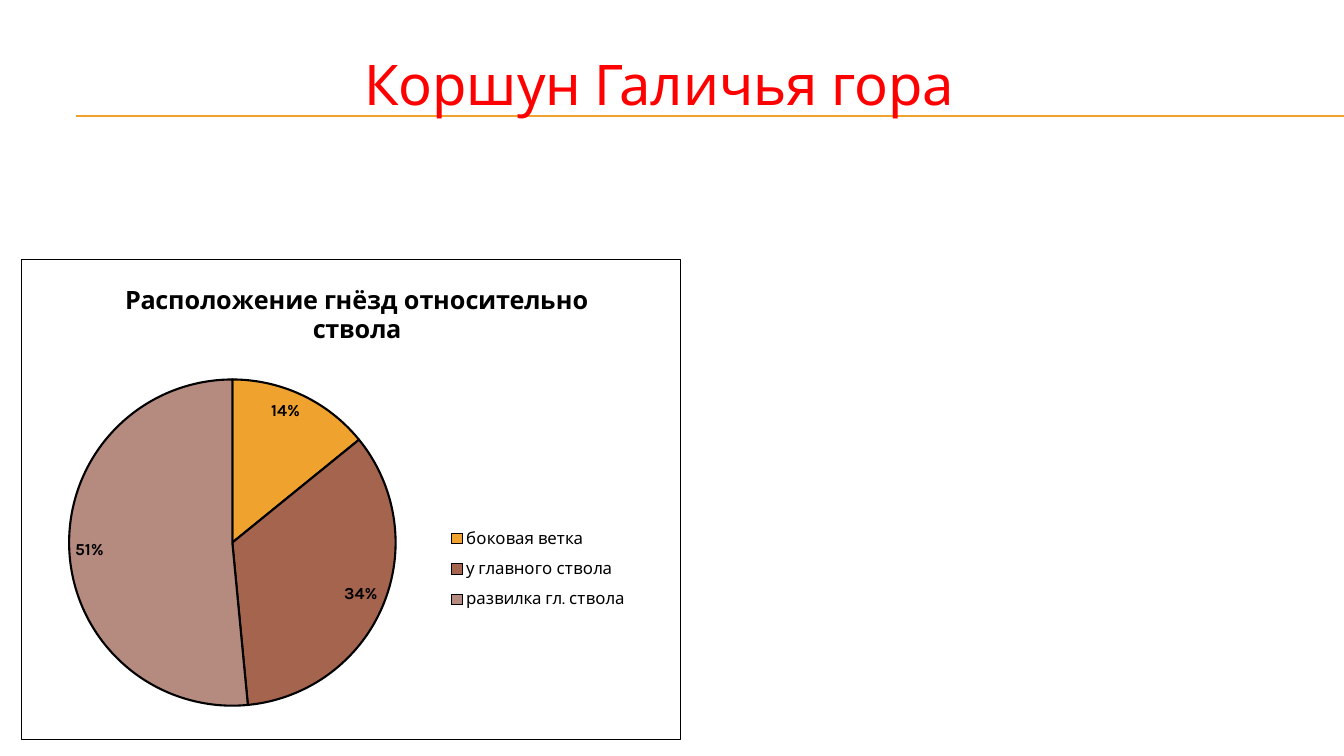
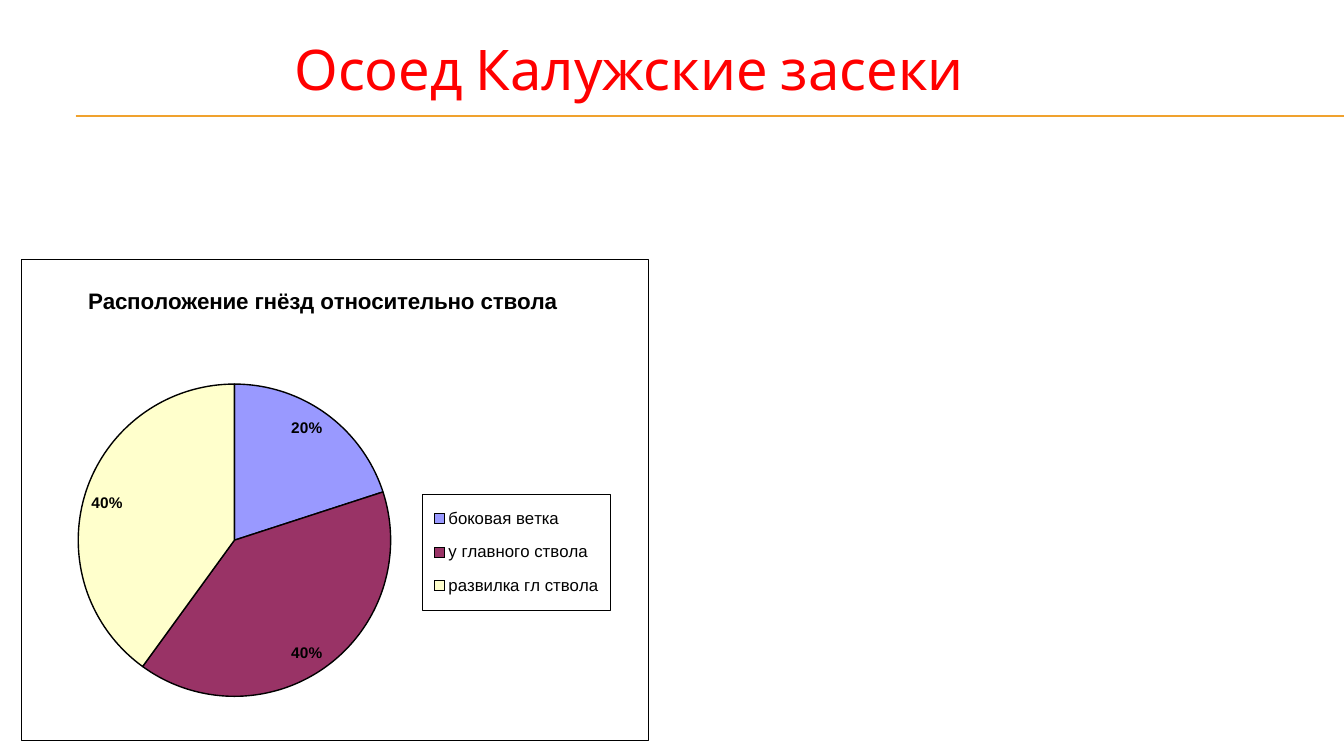
from dataclasses import dataclass

import lxml.etree
import pptx
import pptx.chart.data
import pptx.dml.color
import pptx.enum.chart
import pptx.enum.shapes
import pptx.enum.text
import pptx.oxml
import pptx.oxml.ns
import pptx.util

Inches = pptx.util.Inches
Pt = pptx.util.Pt
qn = pptx.oxml.ns.qn

BLACK = "000000"
WHITE = "FFFFFF"
RED = "FF0000"
AMBER = "F0A22E"
HEADING_FONT = "Karla"
TITLE_ONLY = 5


@dataclass
class Sector:
    place: str
    share: int
    color: str


@dataclass
class NestSlide:
    heading: str
    heading_left: float
    heading_top: float
    chart_width: float
    font: str
    caption_size: int
    label_size: int
    sector_line: float
    border: float
    legend_border: float
    caption_spot: tuple[float, ...]
    pie_spot: tuple[float, ...]
    legend_spot: tuple[float, ...]
    sectors: list[Sector]


CAPTION = "Расположение гнёзд относительно ствола"
NEST_SLIDES = [
    NestSlide(
        "Коршун Галичья гора", 1.85, 0.44, 6.54, "Karla", 18, 12, 1.5, 0.75, 0,
        (0.15, 0.04), (0.07, 0.25, 0.5, 0.68), (0.64, 0.54, 0.29, 0.21),
        [
            Sector("боковая ветка", 14, AMBER),
            Sector("у главного ствола", 34, "A5644E"),
            Sector("развилка гл. ствола", 51, "B58B80"),
        ],
    ),
    NestSlide(
        "Осоед Калужские засеки", 1.55, 0.29, 6.22, "Arial", 16, 11, 1, 0.25, 0.25,
        (0.1, 0.05), (0.09, 0.26, 0.5, 0.65), (0.64, 0.49, 0.3, 0.24),
        [
            Sector("боковая ветка", 20, "9999FF"),
            Sector("у главного ствола", 40, "993366"),
            Sector("развилка гл ствола", 40, "FFFFCC"),
        ],
    ),
]


def rgb(color: str) -> pptx.dml.color.RGBColor:
    return pptx.dml.color.RGBColor.from_string(color)


def style_font(font, name: str, size: float, color: str, bold: bool = False) -> None:
    font.name = name
    font.size = Pt(size)
    font.bold = bold
    font.color.rgb = rgb(color)


def framed_properties(width: float):
    return pptx.oxml.parse_xml(
        f'<c:spPr {pptx.oxml.ns.nsdecls("c", "a")}>'
        f'<a:solidFill><a:srgbClr val="{WHITE}"/></a:solidFill>'
        f'<a:ln w="{Pt(width)}"><a:solidFill><a:srgbClr val="{BLACK}"/></a:solidFill></a:ln>'
        "</c:spPr>"
    )


def set_layout(parent, follower: str, spot: tuple[float, ...], inner: bool = False) -> None:
    for old in parent.findall(qn("c:layout")):
        parent.remove(old)
    layout = lxml.etree.Element(qn("c:layout"))
    manual = lxml.etree.SubElement(layout, qn("c:manualLayout"))
    settings = [("layoutTarget", "inner")] if inner else []
    settings += [("xMode", "edge"), ("yMode", "edge")]
    settings += list(zip("xywh", map(str, spot)))
    for tag, value in settings:
        lxml.etree.SubElement(manual, qn(f"c:{tag}")).set("val", value)
    parent.find(qn(follower)).addprevious(layout)


def add_rules(slide) -> None:
    for y in (1.15, 1.16):
        rule = slide.shapes.add_connector(
            pptx.enum.shapes.MSO_CONNECTOR.STRAIGHT,
            Inches(0.75), Inches(y), Inches(13.33), Inches(y),
        )
        rule.line.color.rgb = rgb(AMBER)
        rule.line.width = Pt(0.75)
        properties = rule.element.find(qn("p:spPr"))
        lxml.etree.SubElement(properties, qn("a:effectLst"))
        slide.slide_layout.shapes.element.append(rule.element)


def add_heading(slide, nest: NestSlide) -> None:
    heading = slide.shapes.title
    heading.left, heading.top = Inches(nest.heading_left), Inches(nest.heading_top)
    heading.width, heading.height = Inches(9.38), Inches(0.77)
    frame = heading.text_frame
    frame.text = nest.heading
    frame.word_wrap = True
    frame.auto_size = pptx.enum.text.MSO_AUTO_SIZE.NONE
    frame.vertical_anchor = pptx.enum.text.MSO_ANCHOR.MIDDLE
    paragraph = frame.paragraphs[0]
    paragraph.alignment = pptx.enum.text.PP_ALIGN.CENTER
    style_font(paragraph.runs[0].font, HEADING_FONT, 40, RED)


def add_nest_chart(slide, nest: NestSlide) -> None:
    shares = pptx.chart.data.CategoryChartData()
    shares.categories = [sector.place for sector in nest.sectors]
    shares.add_series("Series 1", [sector.share for sector in nest.sectors])
    chart = slide.shapes.add_chart(
        pptx.enum.chart.XL_CHART_TYPE.PIE,
        Inches(0.21), Inches(2.57), Inches(nest.chart_width), Inches(4.77), shares,
    ).chart
    style_font(chart.font, nest.font, 10, BLACK)

    chart.has_title = True
    caption = chart.chart_title
    caption.text_frame.text = CAPTION
    style_font(
        caption.text_frame.paragraphs[0].runs[0].font,
        nest.font, nest.caption_size, BLACK, True,
    )
    caption.include_in_layout = False

    chart.has_legend = True
    legend = chart.legend
    legend.position = pptx.enum.chart.XL_LEGEND_POSITION.RIGHT
    legend.include_in_layout = False
    style_font(legend.font, nest.font, 12, BLACK)

    plot = chart.plots[0]
    plot.vary_by_categories = True
    for index, sector in enumerate(nest.sectors):
        point = plot.series[0].points[index]
        point.format.fill.solid()
        point.format.fill.fore_color.rgb = rgb(sector.color)
        point.format.line.color.rgb = rgb(BLACK)
        point.format.line.width = Pt(nest.sector_line)

    plot.has_data_labels = True
    labels = plot.data_labels
    labels.show_value = True
    labels.number_format = '0"%"'
    labels.number_format_is_linked = False
    labels.position = pptx.enum.chart.XL_LABEL_POSITION.INSIDE_END
    style_font(labels.font, nest.font, nest.label_size, BLACK, True)

    body = chart.element.find(qn("c:chart"))
    corners = lxml.etree.Element(qn("c:roundedCorners"))
    corners.set("val", "0")
    body.addprevious(corners)
    body.addnext(framed_properties(nest.border))
    legend_part = body.find(qn("c:legend"))
    set_layout(body.find(qn("c:title")), "c:overlay", nest.caption_spot)
    set_layout(body.find(qn("c:plotArea")), "c:pieChart", nest.pie_spot, inner=True)
    set_layout(legend_part, "c:overlay", nest.legend_spot)
    if nest.legend_border:
        legend_part.find(qn("c:overlay")).addnext(framed_properties(nest.legend_border))


def main() -> None:
    deck = pptx.Presentation()
    deck.slide_width, deck.slide_height = Inches(13.33), Inches(7.5)
    slides = [deck.slides.add_slide(deck.slide_layouts[TITLE_ONLY]) for _ in NEST_SLIDES]
    add_rules(slides[0])
    for slide, nest in zip(slides, NEST_SLIDES):
        add_nest_chart(slide, nest)
        add_heading(slide, nest)
    deck.save("out.pptx")


if __name__ == "__main__":
    main()
